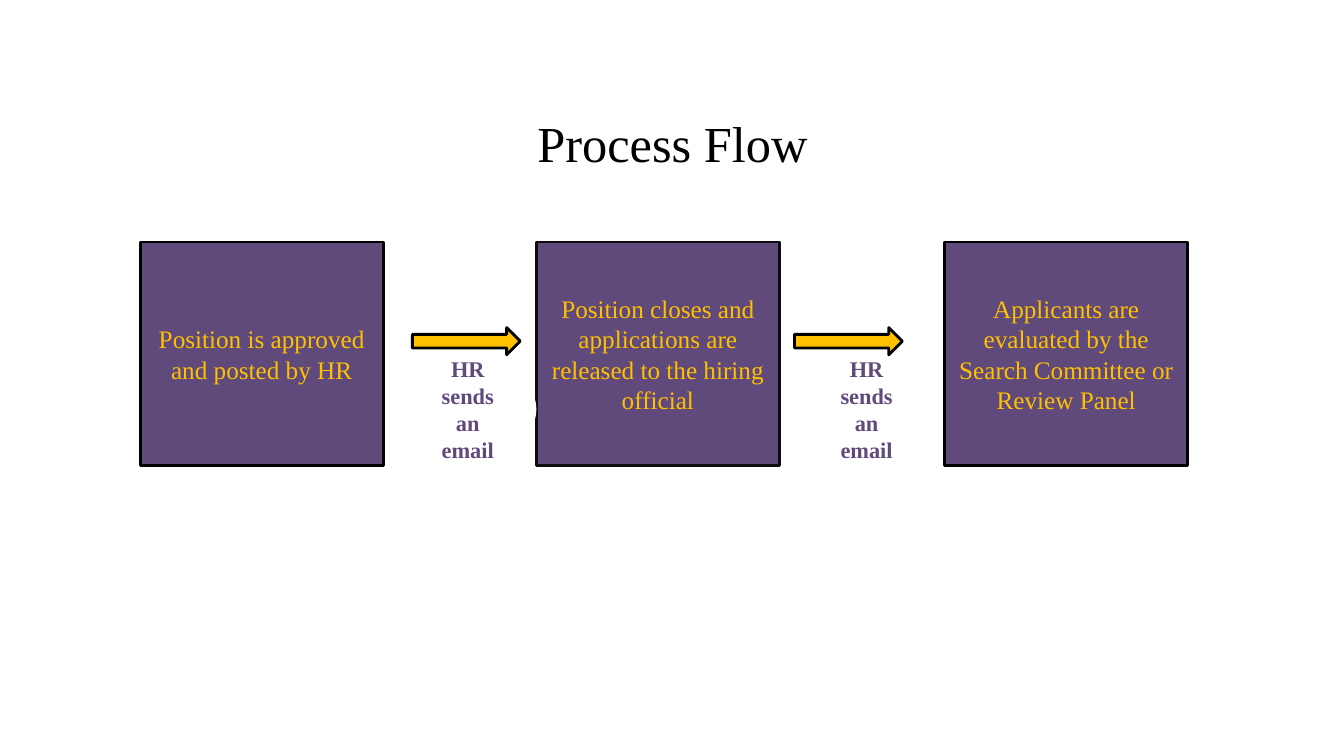
"""Build the Process Flow slide: three steps joined by arrows and notes."""
from pptx import Presentation, util as u
from pptx.dml.color import RGBColor
from pptx.enum import shapes, text

TITLE = "Process Flow"
STEPS = [
    (1.39, "Position is approved and posted by HR"),
    (5.32, "Position closes and applications are released to the hiring official"),
    (9.37, "Applicants are evaluated by the Search Committee or Review Panel"),
]
NOTE = "HR sends an email"
ARROW_LEFTS = [4.09, 7.88]
NOTE_SPANS = [(3.96, 1.36), (7.95, 1.29)]
STEP_TOP, STEP_W, STEP_H = 2.4, 2.41, 2.22
ARROW_TOP, ARROW_W, ARROW_H = 3.25, 1.07, 0.27
NOTE_TOP, NOTE_H = 3.56, 1

FONT = "Times New Roman"
PURPLE = RGBColor(0x60, 0x4A, 0x7B)
GOLD = RGBColor(0xFF, 0xC0, 0x00)
BLACK = RGBColor(0, 0, 0)
NEAR_BLACK = RGBColor(0x0D, 0x0D, 0x0D)
WHITE = RGBColor(0xFF, 0xFF, 0xFF)
STEP_LINES = [BLACK, NEAR_BLACK, BLACK]


def write(sp, words, size, color, bold=False):
    tf = sp.text_frame
    tf.word_wrap = True
    tf.vertical_anchor = text.MSO_ANCHOR.MIDDLE
    p = tf.paragraphs[0]
    p.alignment = text.PP_ALIGN.CENTER
    r = p.add_run()
    r.text = words
    r.font.name, r.font.size, r.font.bold = FONT, u.Pt(size), bold
    r.font.color.rgb = color


def add_box(s, kind, box, fill, line=None):
    sp = s.shapes.add_shape(kind, *map(u.Inches, box))
    sp.shadow.inherit = False
    sp.fill.solid()
    sp.fill.fore_color.rgb = fill
    if line is None:
        sp.line.fill.background()
    else:
        sp.line.color.rgb = line
        sp.line.width = u.Pt(2)
    return sp


def main():
    prs = Presentation()
    prs.slide_width, prs.slide_height = u.Inches(13.33), u.Inches(7.5)
    s = prs.slides.add_slide(prs.slide_layouts[6])
    kinds = shapes.MSO_SHAPE

    title = s.shapes.add_textbox(*map(u.Inches, (0.67, 0.69, 12, 1.44)))
    write(title, TITLE, 36, BLACK)
    for (left, words), line in zip(STEPS, STEP_LINES):
        box = (left, STEP_TOP, STEP_W, STEP_H)
        write(add_box(s, kinds.RECTANGLE, box, PURPLE, line), words, 18, GOLD)
    for left in ARROW_LEFTS:
        box = (left, ARROW_TOP, ARROW_W, ARROW_H)
        add_box(s, kinds.RIGHT_ARROW, box, GOLD, BLACK)
    for left, width in NOTE_SPANS:
        box = (left, NOTE_TOP, width, NOTE_H)
        write(add_box(s, kinds.OVAL, box, WHITE), NOTE, 16, PURPLE, True)
    prs.save("out.pptx")


if __name__ == "__main__":
    main()
